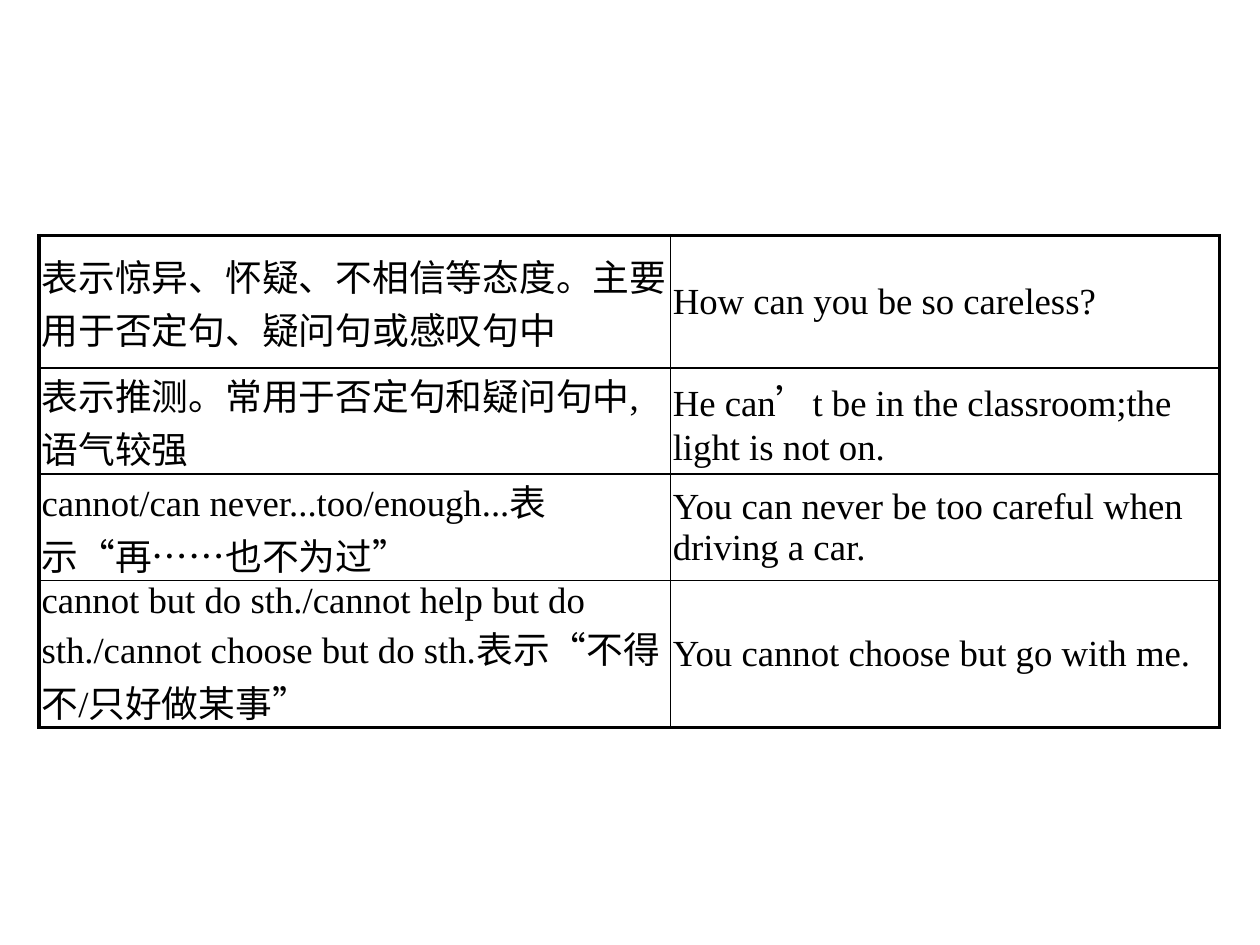
from lxml.etree import SubElement as Sub
from pptx import Presentation
from pptx.dml.color import RGBColor
from pptx.enum.text import MSO_ANCHOR as Anchor
from pptx.oxml.ns import qn
from pptx.util import Inches, Pt

BLACK = RGBColor(0, 0, 0)
LATIN, HAN = "Times New Roman", "Noto Sans CJK SC"
THIN, THICK = Pt(1), Pt(2.25)
COLS = [5.01, 4.36]
ROWS = [1.05, 0.7, 0.7, 1.05]

# Each cell is a list of runs
USES = [
    (["表示惊异、怀疑、不相信等态度。主要用于否定句、疑问句或感叹句中"],
     ["How can you be so careless?"]),
    (["表示推测。常用于否定句和疑问句中,语气较强"],
     ["He can", "’", "t be in the classroom;the light is not on."]),
    (["cannot/can never...too/enough...表示“再……也不为过”"],
     ["You can never be too careful when driving a car."]),
    (["cannot but do sth./cannot help but do sth./cannot choose but do sth."
      "表示“不得不/只好做某事”"],
     ["You cannot choose but go with me."]),
]


def add_border(cell, side, width):
    line = Sub(cell._tc.get_or_add_tcPr(), qn(f"a:ln{side}"), w=str(width))
    fill = Sub(line, qn("a:solidFill"))
    Sub(fill, qn("a:srgbClr"), val=str(BLACK))


def fill_cell(cell, texts):
    cell.vertical_anchor = Anchor.MIDDLE
    cell.margin_left = cell.margin_right = Inches(0.02)
    cell.margin_top = cell.margin_bottom = 0
    para = cell.text_frame.paragraphs[0]
    for text in texts:
        run = para.add_run()
        run.text = text
        run.font.size = Pt(21)
        run.font.color.rgb = BLACK
        run.font.name = HAN if text == "’" else LATIN
        Sub(run.font._element, qn("a:ea"), typeface=HAN)


def add_uses(slide, left, top, width, height):
    table = slide.shapes.add_table(len(ROWS), len(COLS), left, top,
                                   width, height).table
    table.first_row = table.horz_banding = False
    for col, size in zip(table.columns, COLS):
        col.width = Inches(size)
    for row, size in zip(table.rows, ROWS):
        row.height = Inches(size)

    # Thick outer frame, thin inner rules
    for r, row in enumerate(USES):
        for c, texts in enumerate(row):
            cell = table.cell(r, c)
            fill_cell(cell, texts)
            edges = {"L": c == 0, "R": c == len(COLS) - 1,
                     "T": r == 0, "B": r == len(ROWS) - 1}
            for side, outer in edges.items():
                add_border(cell, side, THICK if outer else THIN)
            cell.fill.background()


def main():
    prs = Presentation()
    prs.slide_width, prs.slide_height = Inches(10), Inches(7.5)
    slide = prs.slides.add_slide(prs.slide_layouts[6])
    add_uses(slide, Inches(0.31), Inches(1.87), Inches(9.37), Inches(3.5))
    prs.save("out.pptx")


if __name__ == "__main__":
    main()
